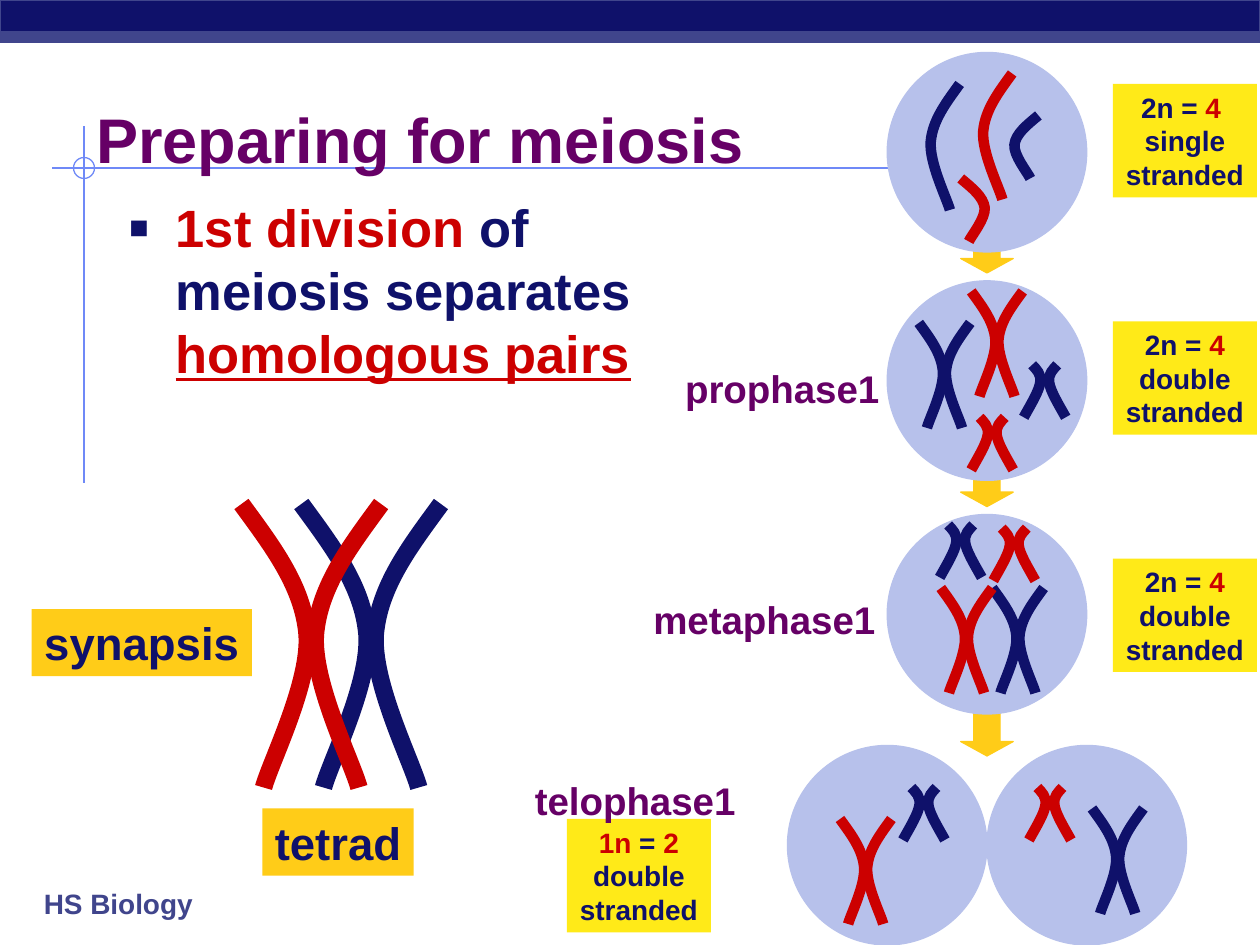
from lxml import etree
from pptx import Presentation
from pptx.dml.color import RGBColor
from pptx.enum.shapes import MSO_CONNECTOR, MSO_SHAPE
from pptx.enum.text import MSO_ANCHOR, PP_ALIGN
from pptx.oxml.ns import qn
from pptx.util import Inches, Pt

NAVY = RGBColor(0x0F, 0x11, 0x6A)
SLATE = RGBColor(0x40, 0x45, 0x8C)
BLUE = RGBColor(0x6F, 0x89, 0xF7)
LILAC = RGBColor(0xB7, 0xC1, 0xEB)
RED = RGBColor(0xCC, 0x00, 0x00)
PURPLE = RGBColor(0x66, 0x00, 0x66)
YELLOW = RGBColor(0xFF, 0xEA, 0x18)
GOLD = RGBColor(0xFF, 0xCC, 0x18)

RECT, OVAL, DOWN = MSO_SHAPE.RECTANGLE, MSO_SHAPE.OVAL, MSO_SHAPE.DOWN_ARROW
STRAIGHT = MSO_CONNECTOR.STRAIGHT
TOP, MIDDLE = MSO_ANCHOR.TOP, MSO_ANCHOR.MIDDLE
LEFT, CENTER = PP_ALIGN.LEFT, PP_ALIGN.CENTER

COLUMNS, ROWS = 120, 90
UNIT = Inches(10) / COLUMNS
CELL = 19
LONG_CURVE = [(0, 0), (0.45, 0.15), (0.89, 0.29), (0.95, 0.46),
              (1, 0.63), (0.42, 0.91), (0.32, 1)]
SHORT_CURVE = [(0, 1), (0.43, 0.74), (0.87, 0.5), (0.94, 0.33),
               (1, 0.17), (0.72, 0.09), (0.48, 0)]
LONG_SIZE, SHORT_SIZE = (4.9, 10), (4, 5)


def grid(*values):
    return [round(value * UNIT) for value in values]


def add_preset(shapes, kind, box, fill=None, line=None):
    shape = shapes.add_shape(kind, *grid(*box))
    shape.shadow.inherit = False
    if fill is None:
        shape.fill.background()
    else:
        shape.fill.solid()
        shape.fill.fore_color.rgb = fill
    if line is None:
        shape.line.fill.background()
    else:
        shape.line.color.rgb = line
        shape.line.width = Pt(0.75)
    return shape


def add_strand(shapes, box, color, weight, curve=LONG_CURVE, mirror=False):
    left, top, width, height = box
    points = [grid(left + width * (1 - x if mirror else x), top + height * y)
              for x, y in curve]
    builder = shapes.build_freeform(*points[0])
    builder.add_line_segments(points[1:], close=False)
    strand = builder.convert_to_shape()
    strand.shadow.inherit = False
    strand.fill.background()
    strand.line.color.rgb = color
    strand.line.width = Pt(weight)
    segments = list(strand.element.iter(qn("a:lnTo")))
    for first in range(0, len(segments), 3):
        bezier = etree.Element(qn("a:cubicBezTo"))
        segments[first].addprevious(bezier)
        for segment in segments[first:first + 3]:
            bezier.append(segment[0])
            segment.getparent().remove(segment)


def add_chromosome(shapes, box, color, weight=6, curve=LONG_CURVE):
    left, top, width, height = box
    arm = width * (0.495 if curve is LONG_CURVE else 0.42)
    add_strand(shapes, (left, top, arm, height), color, weight, curve)
    add_strand(shapes, (left + width - arm, top, arm, height), color, weight, curve, True)


def add_text(page, box, paragraphs, size, fill=None, anchor=MIDDLE, align=CENTER, wrap=False):
    if fill is None:
        shape = page.shapes.add_textbox(*grid(*box))
    else:
        shape = add_preset(page.shapes, RECT, box, fill)
    frame = shape.text_frame
    frame.word_wrap = wrap
    frame.vertical_anchor = anchor
    for index, spans in enumerate(paragraphs):
        para = frame.paragraphs[0] if index == 0 else frame.add_paragraph()
        para.alignment = align
        para.font.name, para.font.size, para.font.bold = "Arial", Pt(size), True
        for text, color in spans:
            span = para.add_run()
            span.text = text
            span.font.color.rgb = color
    return frame


def add_backdrop(page):
    for ends in ((5, 16, 88, 16), (8, 12, 8, 46)):
        line = page.shapes.add_connector(STRAIGHT, *grid(*ends))
        line.line.color.rgb = BLUE
        line.line.width = Pt(1)
        etree.SubElement(line.element.spPr, qn("a:effectLst"))
    add_preset(page.shapes, OVAL, (7, 15, 2, 2), line=BLUE)
    add_preset(page.shapes, RECT, (0, 0, COLUMNS, 4), NAVY, SLATE)
    add_preset(page.shapes, RECT, (0, 3, COLUMNS, 1), SLATE, SLATE)
    add_text(page, (3, 83.8, 19, 4.4), [[("HS Biology", SLATE)]], 16, align=LEFT, wrap=True)


def add_bullet(page, box):
    spans = [("1st division", RED), (" of meiosis separates", NAVY),
             (" ", PURPLE), ("homologous pairs", RED)]
    frame = add_text(page, box, [spans], 30, anchor=TOP, align=LEFT, wrap=True)
    para = frame.paragraphs[0]
    for span in para.runs[2:]:
        span.font.underline = True
    properties = para._p.get_or_add_pPr()
    properties.set("marL", str(Inches(0.38)))
    properties.set("indent", str(-Inches(0.38)))
    marks = [etree.Element(qn("a:buClr")),
             etree.Element(qn("a:buSzPct"), val="120000"),
             etree.Element(qn("a:buFont"), typeface="Arial"),
             etree.Element(qn("a:buChar"), char="▪")]
    etree.SubElement(marks[0], qn("a:srgbClr"), val=str(NAVY))
    for position, mark in enumerate(marks):
        properties.insert(position, mark)


def add_cell(page, left, top, singles=(), longs=(), shorts=(), arrow_top=None):
    shapes = page.shapes.add_group_shape().shapes
    if arrow_top is not None:
        arrow = add_preset(shapes, DOWN, (left + 7, top + arrow_top, 5, 5.5), GOLD, GOLD)
        arrow.adjustments[0], arrow.adjustments[1] = 0.5, 0.275
    add_preset(shapes, OVAL, (left, top, CELL, CELL), LILAC, LILAC)
    for x, y, width, height, color, mirror in singles:
        add_strand(shapes, (left + x, top + y, width, height), color, 6, mirror=mirror)
    for x, y, color in shorts:
        add_chromosome(shapes, (left + x, top + y, *SHORT_SIZE), color, curve=SHORT_CURVE)
    for x, y, color in longs:
        add_chromosome(shapes, (left + x, top + y, *LONG_SIZE), color)


def add_phases(page, left):
    add_cell(page, left, 5, arrow_top=15.5, singles=[
        (4, 3, 2.9, 12, NAVY, True), (9, 2, 2.9, 12, RED, True),
        (7, 12, 2.4, 6, RED, False), (12, 6, 2.4, 6, NAVY, True)])
    add_cell(page, left, 26.75, arrow_top=16,
             longs=[(3, 4, NAVY), (8, 1, RED)], shorts=[(8, 13, RED), (13, 8, NAVY)])
    add_cell(page, left, 49, arrow_top=17.5,
             longs=[(10, 7, NAVY), (5.1, 7, RED)], shorts=[(10.1, 1.3, RED), (5, 1, NAVY)])
    add_cell(page, left + CELL / 2, 71, longs=[(10, 6, NAVY)], shorts=[(4, 4, RED)])
    add_cell(page, left - CELL / 2, 71, longs=[(5, 7, RED)], shorts=[(11, 4, NAVY)])
    for text, box in (("prophase1", (64, 34.2, 21, 5.6)),
                      ("metaphase1", (61, 56.2, 23.6, 5.6)),
                      ("telophase1", (49.7, 73.4, 21.6, 5.6))):
        add_text(page, box, [[(text, PURPLE)]], 22)


def add_counts(page):
    counts = [
        (106, 8, [("2n = ", NAVY), ("4 ", RED)], "single"),
        (106, 30.6, [("2n = ", NAVY), ("4", RED)], "double"),
        (106, 53.2, [("2n = ", NAVY), ("4", RED)], "double"),
        (54, 78, [("1n", RED), (" = ", NAVY), ("2", RED)], "double"),
    ]
    for left, top, formula, strands in counts:
        add_text(page, (left, top, 13.7, 10.8),
                 [formula, [(strands, NAVY)], [("stranded", NAVY)]], 16, YELLOW)


def add_tetrad(page, left, top):
    for shift, color in ((5.7, NAVY), (0, RED)):
        pair = page.shapes.add_group_shape()
        add_chromosome(pair.shapes, (left + shift, top, 13.3, 27), color, 10)
    add_text(page, (left + 2, top + 29, 14.4, 6.4), [[("tetrad", NAVY)]], 26, GOLD)
    add_text(page, (left - 20, top + 10, 21, 6.4), [[("synapsis", NAVY)]], 26, GOLD)


def main():
    deck = Presentation()
    deck.slide_width, deck.slide_height = grid(COLUMNS, ROWS)
    page = deck.slides.add_slide(deck.slide_layouts[6])
    add_backdrop(page)
    add_text(page, (8, 9, 102, 10), [[("Preparing for meiosis", PURPLE)]], 36,
             anchor=TOP, align=LEFT, wrap=True)
    add_bullet(page, (11, 18, 53, 28))
    add_counts(page)
    add_phases(page, 84.5)
    add_tetrad(page, 23, 48)
    deck.save("out.pptx")


if __name__ == "__main__":
    main()
